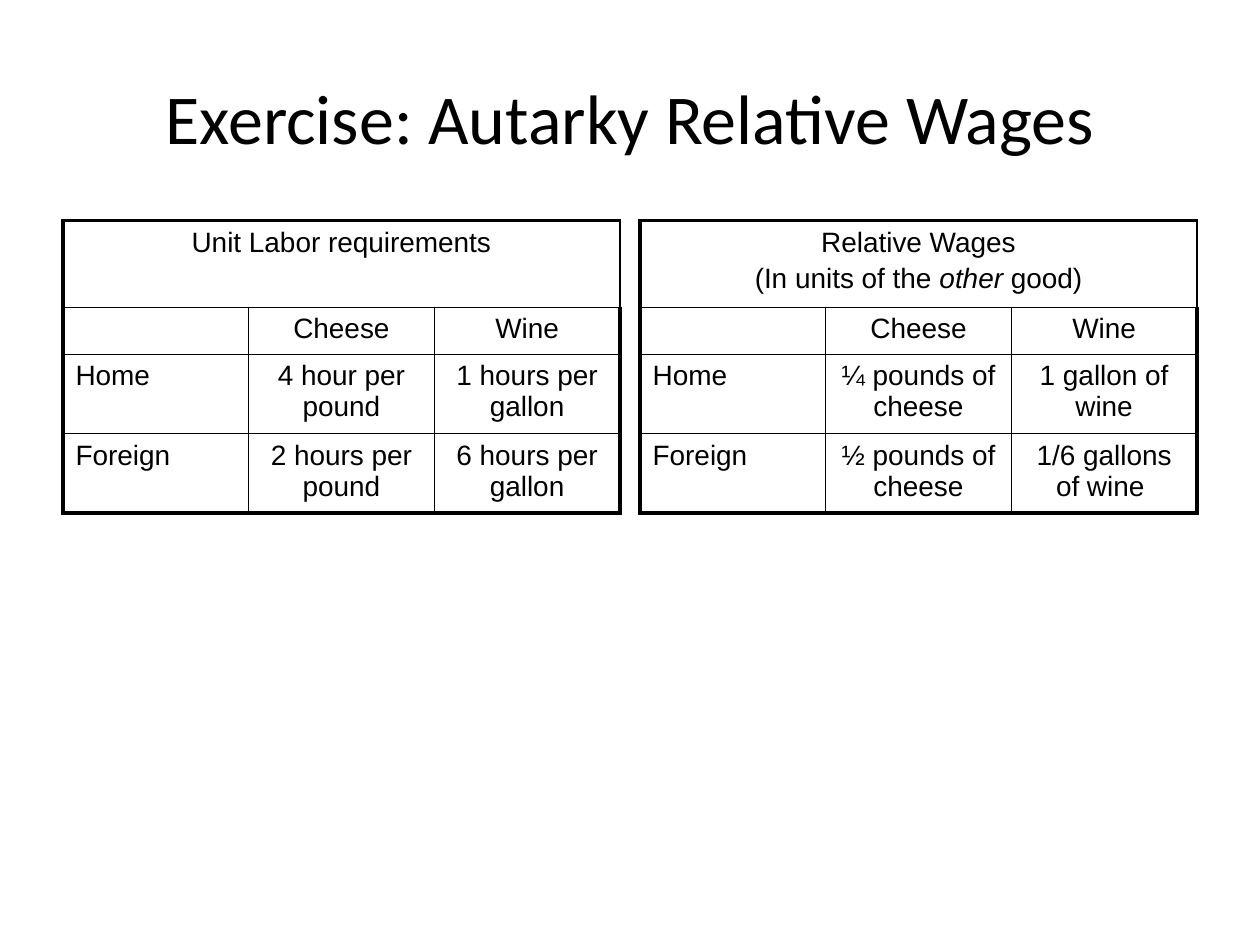
import pptx
import pptx.util
import pptx.dml.color
import pptx.enum.text
import pptx.oxml
import pptx.oxml.ns

Inches = pptx.util.Inches
Pt = pptx.util.Pt
ALIGN = pptx.enum.text.PP_ALIGN
INK = "000000"
THICK, THIN = 2.25, 1
HEIGHTS = [0.69, 0.37, 0.63, 0.63]
WIDTH = 4.42

LABOR = [
    ["Unit Labor requirements", "", ""],
    ["", "Cheese", "Wine"],
    ["Home", "4 hour per pound", "1 hours per gallon"],
    ["Foreign", "2 hours per pound", "6 hours per gallon"],
]
# Asterisks mark italic words
WAGES = [
    ["Relative Wages\n(In units of the *other* good)", "", ""],
    ["", "Cheese", "Wine"],
    ["Home", "¼ pounds of cheese", "1 gallon of wine"],
    ["Foreign", "½ pounds of cheese", "1/6 gallons of wine "],
]


def color(code):
    return pptx.dml.color.RGBColor.from_string(code)


def style(font, name, size):
    font.name = name
    font.size = Pt(size)
    font.color.rgb = color(INK)


def add_title(slide, text):
    title = slide.shapes.title
    title.left, title.top = Inches(0.5), Inches(0.3)
    title.width, title.height = Inches(9), Inches(1.25)
    frame = title.text_frame
    frame.text = text
    frame.vertical_anchor = pptx.enum.text.MSO_ANCHOR.MIDDLE
    para = frame.paragraphs[0]
    para.alignment = ALIGN.CENTER
    style(para.runs[0].font, "Calibri", 40)


def set_edges(cell, row, col):
    """Thick lines on the outer frame, thin lines inside."""
    outer = {"L": col == 0, "R": col == 2, "T": row == 0, "B": row == 3}
    props = cell._tc.get_or_add_tcPr()
    for side, thick in outer.items():
        width = Pt(THICK if thick else THIN)
        props.append(pptx.oxml.parse_xml(
            f'<a:ln{side} {pptx.oxml.ns.nsdecls("a")} w="{width}">'
            f'<a:solidFill><a:srgbClr val="{INK}"/></a:solidFill>'
            f'<a:prstDash val="solid"/></a:ln{side}>'))


def set_text(cell, text, align):
    frame = cell.text_frame
    frame.text = text
    for index, para in enumerate(frame.paragraphs):
        para.alignment = align
        if index:
            para.space_before = Pt(3.2)
        parts = para.text.split("*")
        para.text = parts[0]
        for part in parts[1:]:
            para.add_run().text = part
        for spot, run in enumerate(para.runs):
            style(run.font, "Arial", 16)
            if spot % 2:
                run.font.italic = True
        # Empty cells need the size too, or their row grows
        if not para.runs:
            para._p.get_or_add_endParaRPr().set("sz", "1600")


def add_grid(slide, left, rows):
    table = slide.shapes.add_table(
        len(rows), 3, Inches(left), Inches(1.75),
        Inches(WIDTH), Inches(sum(HEIGHTS))).table
    table.first_row = table.horz_banding = False
    for column in table.columns:
        column.width = Inches(WIDTH / 3)
    for row, texts in enumerate(rows):
        table.rows[row].height = Inches(HEIGHTS[row])
        for col, text in enumerate(texts):
            cell = table.cell(row, col)
            label = row > 0 and col == 0
            set_text(cell, text, ALIGN.LEFT if label else ALIGN.CENTER)
            set_edges(cell, row, col)
            cell.fill.background()
    table.cell(0, 0).merge(table.cell(0, 2))


def main():
    deck = pptx.Presentation()
    deck.slide_width, deck.slide_height = Inches(10), Inches(7.5)
    slide = deck.slides.add_slide(deck.slide_layouts[5])
    add_title(slide, "Exercise: Autarky Relative Wages")
    # Two tables side by side
    add_grid(slide, 0.5, LABOR)
    add_grid(slide, 9.5 - WIDTH, WAGES)
    deck.save("out.pptx")


if __name__ == "__main__":
    main()
